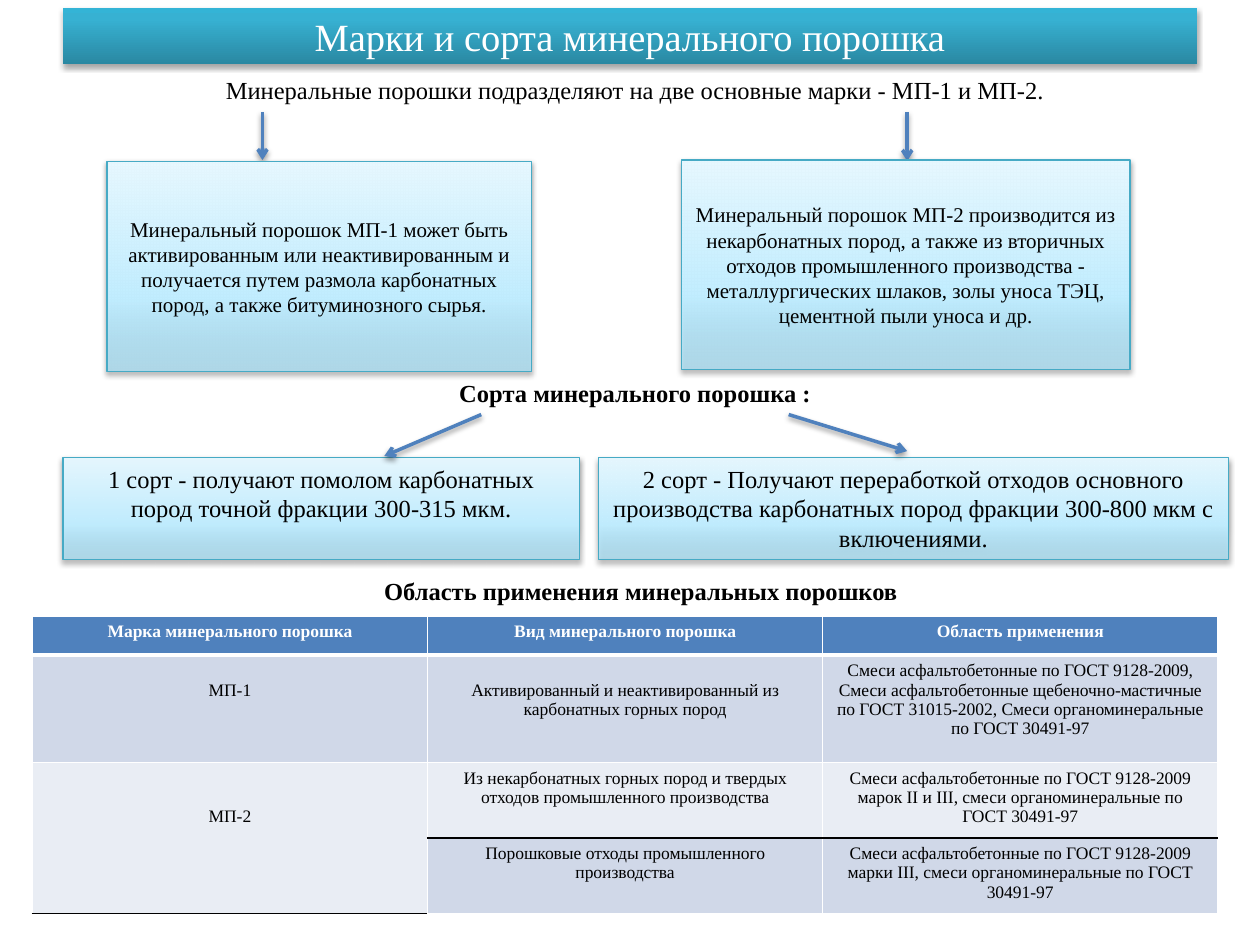
from dataclasses import dataclass

from lxml import etree
from pptx import Presentation
from pptx import util as u
from pptx.dml.color import RGBColor
from pptx.enum import shapes, text
from pptx.oxml.ns import qn

Pt = u.Pt


@dataclass(frozen=True)
class Theme:
    font: str = "Times New Roman"
    white: str = "FFFFFF"
    black: str = "000000"
    accent: str = "4F81BD"
    box_line: str = "46AAC5"
    band_dark: str = "D0D8E8"
    band_light: str = "E9EDF4"
    # Gradient stops from bottom to top: position, colour, opacity (percent)
    title_fill: tuple = ((0, "2A88A2", 100), (80, "37B1D2", 100), (100, "34B4D6", 100))
    box_fill: tuple = ((0, "A7E6FF", 63), (35, "C1EDFF", 100), (100, "E7F8FF", 100))
    title_size: int = 22
    text_size: int = 14
    box_size: int = 12
    table_size: int = 10


THEME = Theme()


def write(frame, wording, size=THEME.text_size, color=THEME.black, bold=False,
          align=text.PP_ALIGN.CENTER, anchor=text.MSO_ANCHOR.TOP):
    """Put one formatted paragraph into a text frame."""
    frame.word_wrap = True
    frame.auto_size = text.MSO_AUTO_SIZE.NONE
    frame.vertical_anchor = anchor
    para = frame.paragraphs[0]
    para.alignment = align
    span = para.add_run()
    span.text = wording
    span.font.name = THEME.font
    span.font.size = Pt(size)
    span.font.bold = bold
    span.font.color.rgb = RGBColor.from_string(color)


def add_color(parent, color, opacity=100):
    node = etree.SubElement(parent, qn("a:srgbClr"), val=color)
    if opacity < 100:
        etree.SubElement(node, qn("a:alpha"), val=str(opacity * 1000))


def add_shadow(shape, opacity=38, distance=1.6):
    """Soft shadow straight down; call it after fill and line are set."""
    effects = etree.SubElement(shape.element.spPr, qn("a:effectLst"))
    shadow = etree.SubElement(effects, qn("a:outerShdw"), blurRad=str(Pt(3.1)),
                              dist=str(Pt(distance)), dir="5400000", rotWithShape="0")
    add_color(shadow, THEME.black, opacity)


def fill_gradient(shape, stops):
    shape.fill.gradient()
    shape.fill.gradient_angle = 90
    stop_list = shape.element.spPr.find(".//" + qn("a:gsLst"))
    for old in list(stop_list):
        stop_list.remove(old)
    for position, color, opacity in stops:
        stop = etree.SubElement(stop_list, qn("a:gs"), pos=str(position * 1000))
        add_color(stop, color, opacity)


def set_borders(cell, top, bottom):
    """White side borders; top and bottom are given as (colour, width)."""
    side = (THEME.white, 1)
    properties = cell._tc.get_or_add_tcPr()
    edges = (("a:lnL", side), ("a:lnR", side), ("a:lnT", top), ("a:lnB", bottom))
    for index, (tag, (color, width)) in enumerate(edges):
        line = etree.Element(qn(tag), w=str(Pt(width)))
        add_color(etree.SubElement(line, qn("a:solidFill")), color)
        properties.insert(index, line)


class SlideBuilder:
    def __init__(self, deck, theme):
        self.theme = theme
        self.page = deck.slides.add_slide(deck.slide_layouts[5])

    def title(self, wording, left, top, width, height):
        box = self.page.shapes.title
        box.left, box.top, box.width, box.height = map(Pt, (left, top, width, height))
        fill_gradient(box, self.theme.title_fill)
        add_shadow(box, opacity=35, distance=1.8)
        write(box.text_frame, wording, size=self.theme.title_size,
              color=self.theme.white, anchor=text.MSO_ANCHOR.MIDDLE)

    def label(self, wording, left, top, width, **style):
        box = self.page.shapes.add_textbox(*map(Pt, (left, top, width, 24.5)))
        write(box.text_frame, wording, **style)

    def box(self, wording, left, top, width, height, **style):
        box = self.page.shapes.add_shape(shapes.MSO_SHAPE.RECTANGLE,
                                         *map(Pt, (left, top, width, height)))
        fill_gradient(box, self.theme.box_fill)
        box.line.color.rgb = RGBColor.from_string(self.theme.box_line)
        box.line.width = Pt(0.75)
        add_shadow(box)
        write(box.text_frame, wording, **style)

    def arrow(self, *ends):
        arrow = self.page.shapes.add_connector(shapes.MSO_CONNECTOR.STRAIGHT,
                                               *map(Pt, ends))
        arrow.line.color.rgb = RGBColor.from_string(self.theme.accent)
        arrow.line.width = Pt(2)
        etree.SubElement(arrow.line._get_or_add_ln(), qn("a:tailEnd"), type="arrow")
        add_shadow(arrow)

    def table(self, rows, left, top, column_width, heights, fills, rules, drops):
        """Rules are the horizontal borders; drops lower the text of a cell."""
        columns = len(rows[0])
        table = self.page.shapes.add_table(
            len(rows), columns, Pt(left), Pt(top),
            Pt(column_width * columns), Pt(sum(heights))).table
        for column in table.columns:
            column.width = Pt(column_width)
        for r, row in enumerate(rows):
            table.rows[r].height = Pt(heights[r])
            for c, wording in enumerate(row):
                cell = table.cell(r, c)
                cell.fill.solid()
                cell.fill.fore_color.rgb = RGBColor.from_string(fills[r])
                set_borders(cell, rules[r], rules[r + 1])
                cell.margin_top = Pt(3.6 + drops.get((r, c), 0))
                if wording:
                    write(cell.text_frame, wording, size=self.theme.table_size, bold=r == 0,
                          color=self.theme.white if r == 0 else self.theme.black)
        return table


def main():
    deck = Presentation()
    deck.slide_width, deck.slide_height = Pt(720), Pt(540)
    slide = SlideBuilder(deck, THEME)

    # Title and the two brands
    slide.title("Марки и сорта минерального порошка", 36, 4.3, 648, 32.4)
    slide.label("Минеральные порошки подразделяют на две основные марки - МП-1 и МП-2.",
                42, 39.6, 642)
    slide.arrow(150, 64, 150, 91.5)
    slide.arrow(518.4, 64, 518.4, 92)
    brand_style = dict(size=THEME.box_size, anchor=text.MSO_ANCHOR.MIDDLE)
    slide.box("Минеральный порошок МП-1 может быть активированным или неактивированным "
              "и получается путем размола карбонатных пород, а также битуминозного сырья.",
              61.2, 92.2, 242.6, 120.2, **brand_style)
    slide.box("Минеральный порошок МП-2 производится из некарбонатных пород, а также "
              "из вторичных отходов промышленного производства - металлургических "
              "шлаков, золы уноса ТЭЦ, цементной пыли уноса и др.",
              389.5, 91.5, 256.3, 119.8, **brand_style)

    # Grades
    slide.label("Сорта минерального порошка :", 42, 212.4, 642, bold=True)
    slide.box("1 сорт - получают помолом карбонатных пород точной фракции 300-315 мкм.",
              36, 261.4, 295.2, 58.3)
    slide.box("2 сорт - Получают переработкой отходов основного производства "
              "карбонатных пород фракции 300-800 мкм с включениями.",
              342, 261.4, 360, 58.3)
    slide.arrow(275, 236.9, 219.6, 260.6)
    slide.arrow(450.7, 236.9, 518.4, 257.8)

    # Fields of use
    slide.label("Область применения минеральных порошков", 212.4, 325.4, 321.8,
                bold=True, align=text.PP_ALIGN.LEFT)
    thin, thick, dark = (THEME.white, 1), (THEME.white, 3), (THEME.black, 1)
    table = slide.table(
        [("Марка минерального порошка", "Вид минерального порошка", "Область применения"),
         ("МП-1", "Активированный и неактивированный из карбонатных горных пород",
          "Смеси асфальтобетонные по ГОСТ 9128-2009, Смеси асфальтобетонные "
          "щебеночно-мастичные по ГОСТ 31015-2002, Смеси органоминеральные "
          "по ГОСТ 30491-97"),
         ("МП-2", "Из некарбонатных горных пород и твердых отходов "
          "промышленного производства",
          "Смеси асфальтобетонные по ГОСТ 9128-2009 марок II и III, "
          "смеси органоминеральные по ГОСТ 30491-97"),
         ("", "Порошковые отходы промышленного производства",
          "Смеси асфальтобетонные по ГОСТ 9128-2009 марки III, "
          "смеси органоминеральные по ГОСТ 30491-97")],
        18.5, 352.1, 225.8, (22.3, 61.2, 43.2, 43.2),
        fills=(THEME.accent, THEME.band_dark, THEME.band_light, THEME.band_dark),
        rules=(thin, thick, thin, dark, thin),
        drops={(1, 0): 11, (1, 1): 11, (2, 0): 22})
    table.cell(2, 0).merge(table.cell(3, 0))

    deck.save("out.pptx")


if __name__ == "__main__":
    main()
